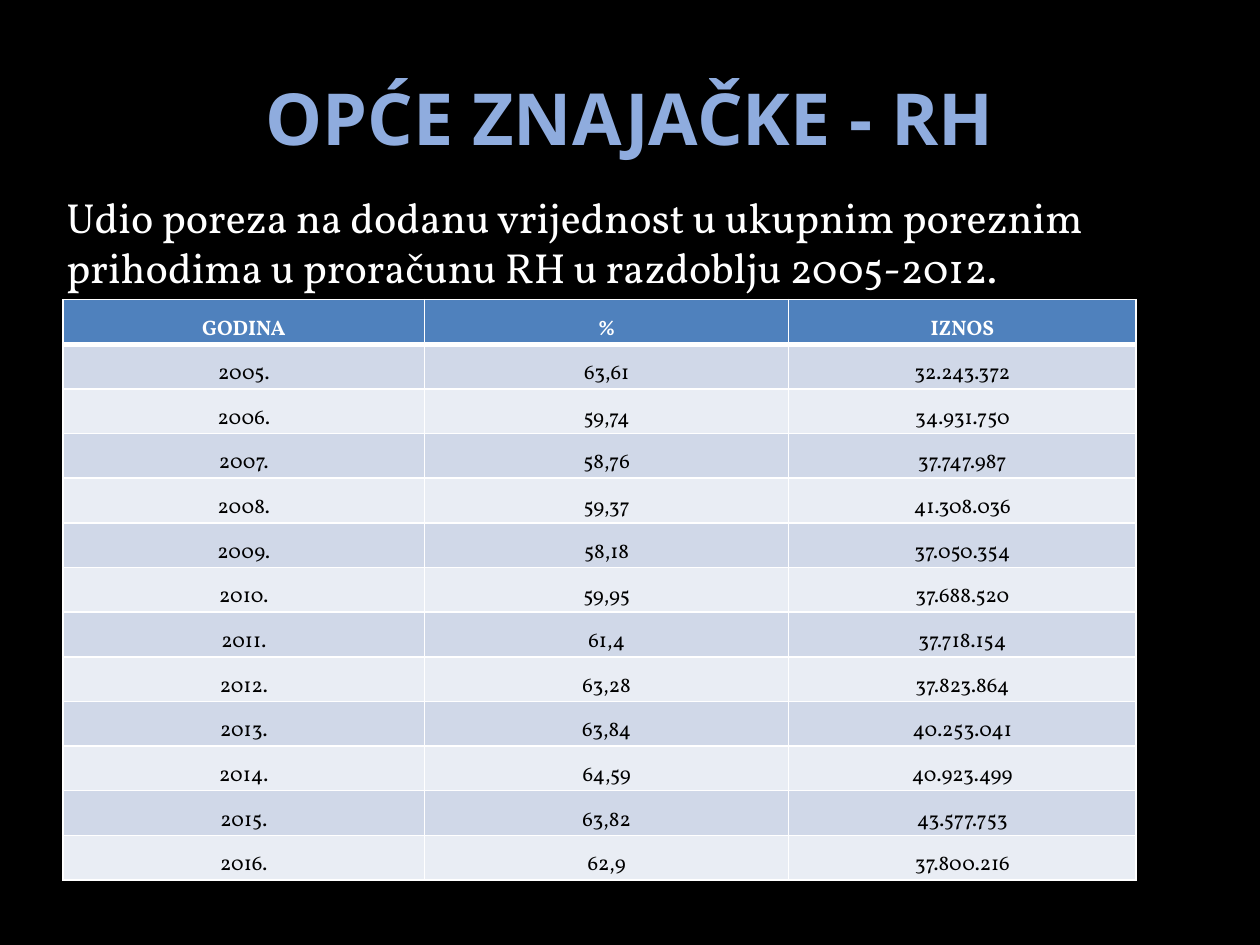
from dataclasses import dataclass

from lxml.etree import SubElement
from pptx import Presentation
from pptx.dml.color import RGBColor
from pptx.enum.text import MSO_ANCHOR, PP_ALIGN
from pptx.oxml.ns import qn
from pptx.slide import Slide
from pptx.table import _Cell
from pptx.text.text import TextFrame
from pptx.util import Cm, Pt

BLACK, WHITE = "000000", "FFFFFF"
TITLE_BLUE, HEADER_BLUE = "8FACDE", "4F81BD"
BANDS = ("D0D8E8", "E9EDF4")
HEADING_FONT, BODY_FONT = "Noto Sans", "Vollkorn"
ROW_HEIGHT = 0.9
COLUMN_WIDTHS = (7.29, 7.34, 7.0)
HEADERS = ("GODINA", "%", "IZNOS")


@dataclass(frozen=True)
class TextStyle:
    font: str
    size: float
    color: str
    bold: bool = False
    align: PP_ALIGN = PP_ALIGN.LEFT


@dataclass(frozen=True)
class TextBlock:
    text: str
    left: float
    top: float
    width: float
    height: float
    style: TextStyle
    anchor: MSO_ANCHOR = MSO_ANCHOR.TOP


@dataclass(frozen=True)
class YearRevenue:
    year: str
    share: str
    amount: str


HEADER_STYLE = TextStyle(BODY_FONT, 12, WHITE, True, PP_ALIGN.CENTER)
VALUE_STYLE = TextStyle(BODY_FONT, 12, BLACK, False, PP_ALIGN.CENTER)

TEXT_BLOCKS = (
    TextBlock("OPĆE ZNAJAČKE - RH", 1.27, 0.76, 22.86, 3.18,
              TextStyle(HEADING_FONT, 41, TITLE_BLUE, True, PP_ALIGN.CENTER),
              MSO_ANCHOR.MIDDLE),
    TextBlock("Udio poreza na dodanu vrijednost u ukupnim poreznim "
              "prihodima u proračunu RH u razdoblju 2005-2012.",
              1.09, 3.73, 22.81, 2.31, TextStyle(BODY_FONT, 24, WHITE)),
)

REVENUES = (
    YearRevenue("2005.", "63,61", "32.243.372"),
    YearRevenue("2006.", "59,74", "34.931.750"),
    YearRevenue("2007.", "58,76", "37.747.987"),
    YearRevenue("2008.", "59,37", "41.308.036"),
    YearRevenue("2009.", "58,18", "37.050.354"),
    YearRevenue("2010.", "59,95", "37.688.520"),
    YearRevenue("2011.", "61,4", "37.718.154"),
    YearRevenue("2012.", "63,28", "37.823.864"),
    YearRevenue("2013.", "63,84", "40.253.041"),
    YearRevenue("2014.", "64,59", "40.923.499"),
    YearRevenue("2015.", "63,82", "43.577.753"),
    YearRevenue("2016.", "62,9", "37.800.216"),
)


def rgb(hex_color: str) -> RGBColor:
    return RGBColor.from_string(hex_color)


def write_text(frame: TextFrame, text: str, style: TextStyle) -> None:
    frame.text = text
    for paragraph in frame.paragraphs:
        paragraph.alignment = style.align
        for run in paragraph.runs:
            run.font.name = style.font
            run.font.size = Pt(style.size)
            run.font.bold = style.bold
            run.font.color.rgb = rgb(style.color)


def add_text_block(slide: Slide, block: TextBlock) -> None:
    box = slide.shapes.add_textbox(Cm(block.left), Cm(block.top),
                                   Cm(block.width), Cm(block.height))
    frame = box.text_frame
    frame.word_wrap = True
    frame.vertical_anchor = block.anchor
    write_text(frame, block.text, block.style)


def set_borders(cell: _Cell, top: float, bottom: float) -> None:
    """Draw white cell edges; top and bottom widths are in points."""
    properties = cell._tc.get_or_add_tcPr()
    widths = {"a:lnL": 1, "a:lnR": 1, "a:lnT": top, "a:lnB": bottom}
    for tag, width in widths.items():
        line = SubElement(properties, qn(tag), w=str(Pt(width)))
        fill = SubElement(line, qn("a:solidFill"))
        SubElement(fill, qn("a:srgbClr"), val=WHITE)


def fill_cell(cell: _Cell, text: str, style: TextStyle, background: str,
              top: float = 1, bottom: float = 1) -> None:
    cell.margin_left = cell.margin_right = cell.margin_top = Cm(0.03)
    cell.margin_bottom = Cm(0)
    cell.vertical_anchor = MSO_ANCHOR.BOTTOM
    set_borders(cell, top, bottom)
    cell.fill.solid()
    cell.fill.fore_color.rgb = rgb(background)
    write_text(cell.text_frame, text, style)


def add_revenue_table(slide: Slide) -> None:
    row_count = len(REVENUES) + 1
    table = slide.shapes.add_table(
        row_count, len(HEADERS), Cm(1.27), Cm(6.04),
        Cm(sum(COLUMN_WIDTHS)), Cm(ROW_HEIGHT * row_count)).table
    for column, width in zip(table.columns, COLUMN_WIDTHS):
        column.width = Cm(width)
    for row in table.rows:
        row.height = Cm(ROW_HEIGHT)
    for column, header in enumerate(HEADERS):
        fill_cell(table.cell(0, column), header, HEADER_STYLE, HEADER_BLUE,
                  bottom=3)
    for row, revenue in enumerate(REVENUES, start=1):
        values = (revenue.year, revenue.share, revenue.amount)
        for column, value in enumerate(values):
            fill_cell(table.cell(row, column), value, VALUE_STYLE,
                      BANDS[(row - 1) % 2], top=3 if row == 1 else 1)


def main() -> None:
    presentation = Presentation()
    presentation.slide_width = Cm(25.4)
    presentation.slide_height = Cm(19.05)
    slide = presentation.slides.add_slide(presentation.slide_layouts[6])
    slide.background.fill.solid()
    slide.background.fill.fore_color.rgb = rgb(BLACK)
    for block in TEXT_BLOCKS:
        add_text_block(slide, block)
    add_revenue_table(slide)
    presentation.save("out.pptx")


if __name__ == "__main__":
    main()
